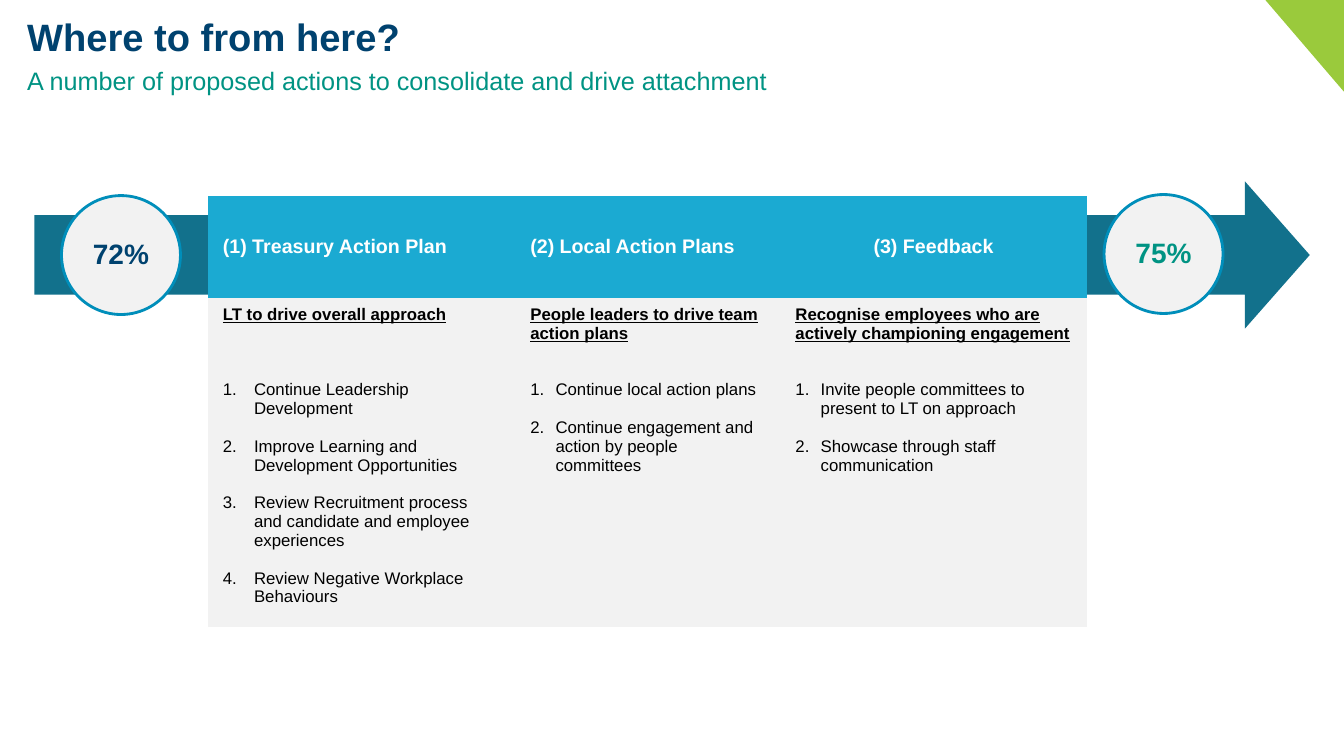
from dataclasses import dataclass

from lxml import etree
from pptx import Presentation
from pptx.dml.color import RGBColor
from pptx.enum.shapes import MSO_SHAPE
from pptx.enum.text import MSO_ANCHOR, PP_ALIGN
from pptx.oxml.ns import qn
from pptx.util import Inches, Pt

LEFT, CENTER = PP_ALIGN.LEFT, PP_ALIGN.CENTER
TOP, MIDDLE = MSO_ANCHOR.TOP, MSO_ANCHOR.MIDDLE
RIGHT_ARROW, OVAL = MSO_SHAPE.RIGHT_ARROW, MSO_SHAPE.OVAL

FONT = "Arial"
LINE_GAP = 13.45  # one text line of the table body, in points
COLORS = {
    "navy": "00426F", "teal": "009383", "green": "9ACA3C", "arrow": "12718C",
    "ring": "008EBA", "header": "1BAAD2", "grey": "F2F2F2",
    "white": "FFFFFF", "black": "000000",
}


@dataclass
class Score:
    text: str
    left: float
    top: float
    color: str


@dataclass
class PlanColumn:
    title: str
    alignment: PP_ALIGN
    width: float
    lead: str
    lead_gap: int  # lines between the lead and the actions
    indent: float
    actions: list[str]


SCORES = [Score("72%", 0.61, 1.94, "navy"), Score("75%", 10.95, 1.93, "teal")]

PLAN_COLUMNS = [
    PlanColumn("(1) Treasury Action Plan", LEFT, 3.05,
               "LT to drive overall approach", 3, 0.31,
               ["Continue Leadership Development",
                "Improve Learning and Development Opportunities",
                "Review Recruitment process and candidate and employee experiences",
                "Review Negative Workplace Behaviours"]),
    PlanColumn("(2) Local Action Plans", LEFT, 2.63,
               "People leaders to drive team action plans", 2, 0.25,
               ["Continue local action plans",
                "Continue engagement and action by people committees"]),
    PlanColumn("(3) Feedback", CENTER, 3.04,
               "Recognise employees who are actively championing engagement", 2, 0.25,
               ["Invite people committees to present to LT on approach",
                "Showcase through staff communication"]),
]


def rgb(name: str) -> RGBColor:
    return RGBColor.from_string(COLORS[name])


def add_run(paragraph, text: str, size: float, color: str,
            bold: bool = False, underline: bool = False) -> None:
    run = paragraph.add_run()
    run.text = text
    font = run.font
    font.name, font.size, font.bold, font.underline = FONT, Pt(size), bold, underline
    font.color.rgb = rgb(color)


def clear_margins(frame) -> None:
    frame.margin_left = frame.margin_right = frame.margin_top = frame.margin_bottom = 0


def add_heading(slide, top: float, width: float, height: float,
                text: str, size: float, color: str, bold: bool) -> None:
    box = slide.shapes.add_textbox(Inches(0.27), Inches(top), Inches(width), Inches(height))
    frame = box.text_frame
    frame.word_wrap = True
    clear_margins(frame)
    add_run(frame.paragraphs[0], text, size, color, bold)


def add_corner(slide) -> None:
    builder = slide.shapes.build_freeform(Inches(13.33), 0)
    builder.add_line_segments([(Inches(12.55), 0), (Inches(13.33), Inches(0.91))])
    corner = builder.convert_to_shape()
    corner.shadow.inherit = False
    corner.fill.solid()
    corner.fill.fore_color.rgb = rgb("green")
    corner.line.fill.background()


def add_arrow(slide) -> None:
    arrow = slide.shapes.add_shape(
        RIGHT_ARROW, Inches(0.34), Inches(1.8), Inches(12.65), Inches(1.46))
    arrow.adjustments[0] = 0.54
    arrow.adjustments[1] = 0.44
    arrow.shadow.inherit = False
    arrow.fill.solid()
    arrow.fill.fore_color.rgb = rgb("arrow")
    arrow.line.fill.background()


def add_score(slide, score: Score) -> None:
    circle = slide.shapes.add_shape(
        OVAL, Inches(score.left), Inches(score.top), Inches(1.18), Inches(1.18))
    circle.shadow.inherit = False
    circle.fill.solid()
    circle.fill.fore_color.rgb = rgb("grey")
    circle.line.color.rgb = rgb("ring")
    circle.line.width = Pt(2)
    frame = circle.text_frame
    clear_margins(frame)
    frame.vertical_anchor = MIDDLE
    paragraph = frame.paragraphs[0]
    paragraph.alignment = CENTER
    paragraph.line_spacing = 0.9
    add_run(paragraph, score.text, 20, score.color, bold=True)


def number_paragraph(paragraph, indent: float) -> None:
    properties = paragraph._p.get_or_add_pPr()
    properties.set("marL", str(Inches(indent)))
    properties.set("indent", str(-Inches(indent)))
    etree.SubElement(properties, qn("a:buFont"), typeface="+mj-lt")
    etree.SubElement(properties, qn("a:buAutoNum"), type="arabicPeriod")


def style_cell(cell, fill: str, anchor: MSO_ANCHOR) -> None:
    cell.fill.solid()
    cell.fill.fore_color.rgb = rgb(fill)
    cell.vertical_anchor = anchor
    cell.margin_left = cell.margin_right = Inches(0.15)
    cell.margin_top = cell.margin_bottom = Inches(0.07)


def fill_column(table, index: int, column: PlanColumn) -> None:
    table.columns[index].width = Inches(column.width)
    header, body = table.cell(0, index), table.cell(1, index)
    style_cell(header, "header", MIDDLE)
    style_cell(body, "grey", TOP)

    title = header.text_frame.paragraphs[0]
    title.alignment = column.alignment
    add_run(title, column.title, 14, "white", bold=True)

    lead = body.text_frame.paragraphs[0]
    add_run(lead, column.lead, 12, "black", bold=True, underline=True)
    for position, action in enumerate(column.actions):
        paragraph = body.text_frame.add_paragraph()
        gap_lines = 1 if position else column.lead_gap
        paragraph.space_before = Pt(gap_lines * LINE_GAP)
        number_paragraph(paragraph, column.indent)
        add_run(paragraph, action, 12, "black")


def add_plan_table(slide) -> None:
    width = sum(column.width for column in PLAN_COLUMNS)
    frame = slide.shapes.add_table(
        2, len(PLAN_COLUMNS), Inches(2.06), Inches(1.94), Inches(width), Inches(4.16))
    table = frame.table
    table.first_row = table.horz_banding = False
    table.rows[0].height = Inches(1.02)
    table.rows[1].height = Inches(3.14)
    # The plain table style has no grid lines
    table._tbl.tblPr.find(qn("a:tableStyleId")).text = "{2D5ABB26-0587-4C30-8999-92F81FD0307C}"
    for index, column in enumerate(PLAN_COLUMNS):
        fill_column(table, index, column)


def main() -> None:
    presentation = Presentation()
    presentation.slide_width = Inches(13.33)
    presentation.slide_height = Inches(7.5)
    slide = presentation.slides.add_slide(presentation.slide_layouts[6])

    # Headings and corner
    add_corner(slide)
    add_heading(slide, 0.13, 6, 0.5, "Where to from here?", 27.2, "navy", True)
    add_heading(slide, 0.65, 11.86, 0.3,
                "A number of proposed actions to consolidate and drive attachment",
                18, "teal", False)

    # Arrow with the scores at both ends
    add_arrow(slide)
    for score in SCORES:
        add_score(slide, score)

    # Action plans
    add_plan_table(slide)
    presentation.save("out.pptx")


if __name__ == "__main__":
    main()
